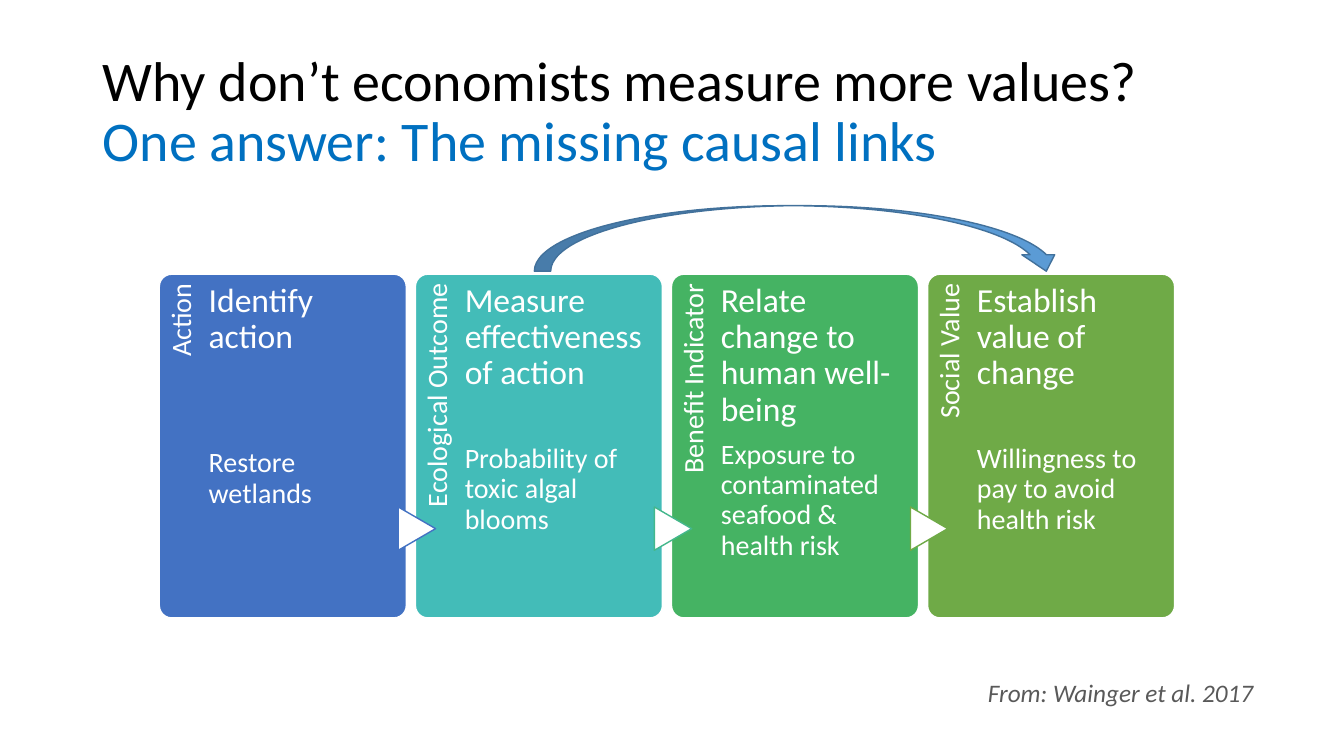
import pptx
import pptx.util
import pptx.dml.color
import pptx.enum.shapes
import pptx.enum.text
from dataclasses import dataclass

Inches = pptx.util.Inches
Pt = pptx.util.Pt
Shape = pptx.enum.shapes.MSO_SHAPE
Align = pptx.enum.text.PP_ALIGN
Anchor = pptx.enum.text.MSO_ANCHOR


@dataclass(frozen=True)
class Theme:
    font: str = "Calibri"
    title_size: int = 40
    heading_size: int = 24
    body_size: int = 20
    source_size: int = 18
    black: str = "000000"
    white: str = "FFFFFF"
    accent: str = "0070C0"
    grey: str = "595959"
    arrow_fill: str = "5B9BD5"
    arrow_line: str = "42719B"


def rgb(value):
    return pptx.dml.color.RGBColor.from_string(value)


class SlideBuilder:
    def __init__(self, slide, theme):
        self.slide = slide
        self.theme = theme

    def shape(self, kind, box, fill, line, adjustments=(), rotation=0):
        sp = self.slide.shapes.add_shape(kind, *map(Inches, box))
        sp.shadow.inherit = False
        sp.fill.solid()
        sp.fill.fore_color.rgb = rgb(fill)
        sp.line.color.rgb = rgb(line)
        sp.line.width = Pt(1)
        sp.rotation = rotation
        for i, value in enumerate(adjustments):
            sp.adjustments[i] = value

    def text_frame(self, box, insets=(0.1, 0.05, 0.1, 0.05), anchor=Anchor.TOP, rotation=0):
        sp = self.slide.shapes.add_textbox(*map(Inches, box))
        sp.rotation = rotation
        tf = sp.text_frame
        tf.word_wrap = True
        tf.vertical_anchor = anchor
        tf.margin_left, tf.margin_top, tf.margin_right, tf.margin_bottom = map(Inches, insets)
        return tf

    def run(self, p, text, size, color, italic=False):
        r = p.add_run()
        r.text = text
        r.font.name = self.theme.font
        r.font.size = Pt(size)
        r.font.color.rgb = rgb(color)
        r.font.italic = italic

    def title(self, question, answer):
        t = self.theme
        tf = self.text_frame((0.92, 0.4, 11.5, 1.45), anchor=Anchor.MIDDLE)
        p = tf.paragraphs[0]
        p.line_spacing = 0.9
        self.run(p, question, t.title_size, t.black)
        p.add_line_break()
        self.run(p, answer, t.title_size, t.accent)

    def card(self, left, color, label, heading, detail, gap):
        """Draw one step; gap is the space in points between heading and detail."""
        t = self.theme
        self.shape(Shape.ROUNDED_RECTANGLE, (left, CARD_TOP, CARD_W, CARD_H),
                   color, t.white, [0.05])

        tf = self.text_frame((left - 1.15, 3.87, 2.8, 0.49), (0, 0.07, 0.1, 0), rotation=270)
        p = tf.paragraphs[0]
        p.alignment = Align.RIGHT
        p.line_spacing = 0.9
        self.run(p, label, t.body_size, t.white)

        tf = self.text_frame((left + 0.49, CARD_TOP, 1.83, CARD_H), (0, 0.09, 0, 0))
        p = tf.paragraphs[0]
        p.line_spacing = 0.9
        self.run(p, heading, t.heading_size, t.white)
        p = tf.add_paragraph()
        p.line_spacing = 0.9
        p.space_before = Pt(gap)
        self.run(p, detail, t.body_size, t.white)

    def step_marker(self, card_left, line):
        self.shape(Shape.FLOWCHART_EXTRACT, (card_left - 0.2, 5.06, 0.43, 0.37),
                   self.theme.white, line, rotation=90)

    def source(self, text):
        t = self.theme
        tf = self.text_frame((9.7, 6.67, 2.99, 0.4))
        self.run(tf.paragraphs[0], text, t.source_size, t.grey, italic=True)

    def skip_arrow(self):
        t = self.theme
        self.shape(Shape.CURVED_DOWN_ARROW, (5.3, 2.04, 5.24, 0.65),
                   t.arrow_fill, t.arrow_line, [0.25, 0.5, 0.25])


CARD_LEFT, CARD_TOP, CARD_W, CARD_H, CARD_STEP = 1.58, 2.72, 2.45, 3.41, 2.54

# Card colour, marker outline, label, heading, detail, gap in points
STEPS = [
    ("4372C3", None, "Action", "Identify action", "Restore wetlands", 66.4),
    ("43BCB8", "4372C3", "Ecological Outcome", "Measure effectiveness of action",
     "Probability of toxic algal blooms", 37.4),
    ("45B363", "44B78C", "Benefit Indicator", "Relate change to human well-being",
     "Exposure to contaminated seafood & health risk", 8.4),
    ("6FAA47", "6FAA47", "Social Value", "Establish value of change",
     "Willingness to pay to avoid health risk", 37.4),
]


def main():
    prs = pptx.Presentation()
    prs.slide_width = Inches(13.33)
    prs.slide_height = Inches(7.5)
    s = SlideBuilder(prs.slides.add_slide(prs.slide_layouts[6]), Theme())

    s.title("Why don’t economists measure more values?", "One answer: The missing causal links")
    for i, (color, marker_line, label, heading, detail, gap) in enumerate(STEPS):
        left = CARD_LEFT + i * CARD_STEP
        s.card(left, color, label, heading, detail, gap)
        if marker_line:
            s.step_marker(left, marker_line)
    s.source("From: Wainger et al. 2017")
    s.skip_arrow()

    prs.save("out.pptx")


if __name__ == "__main__":
    main()
